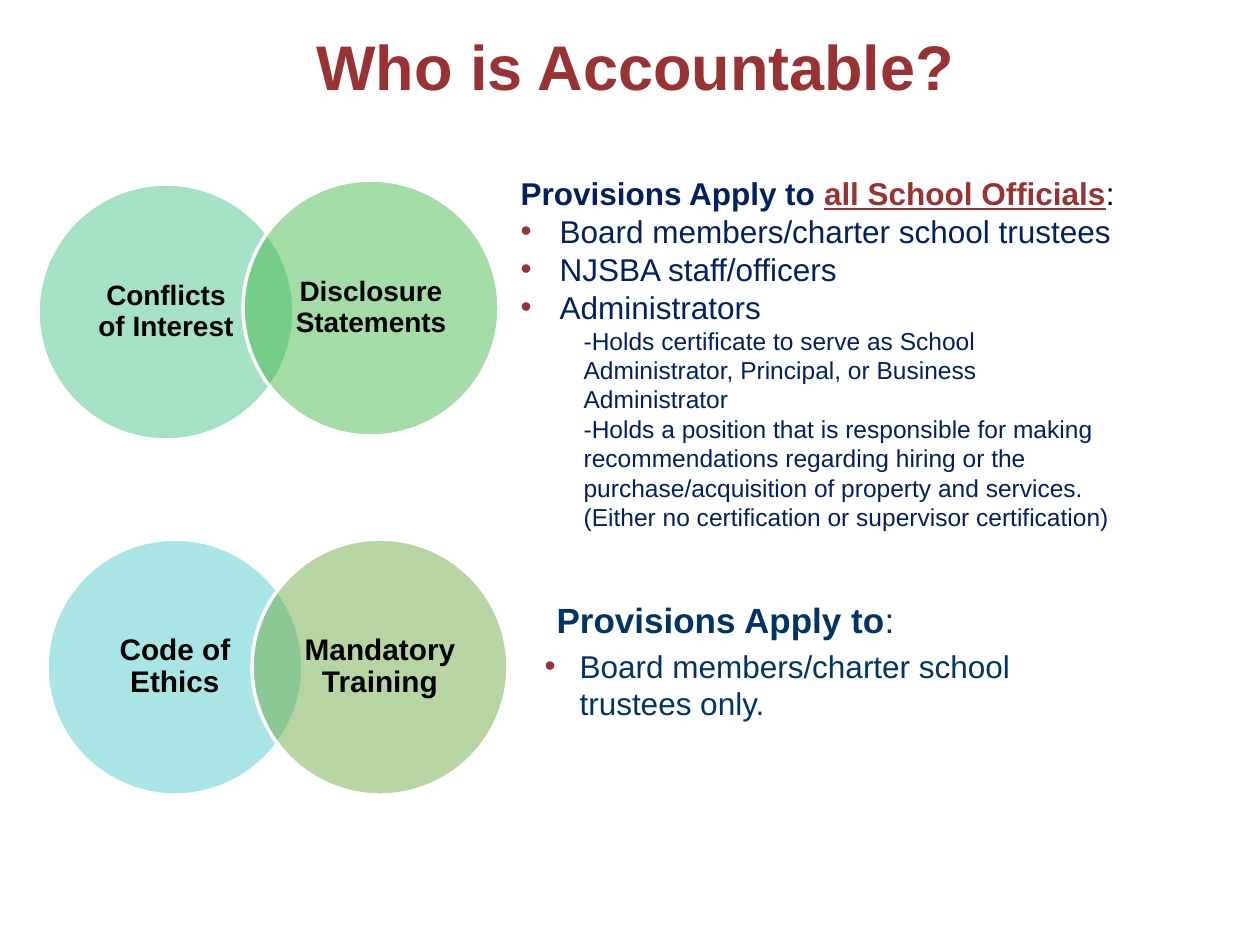
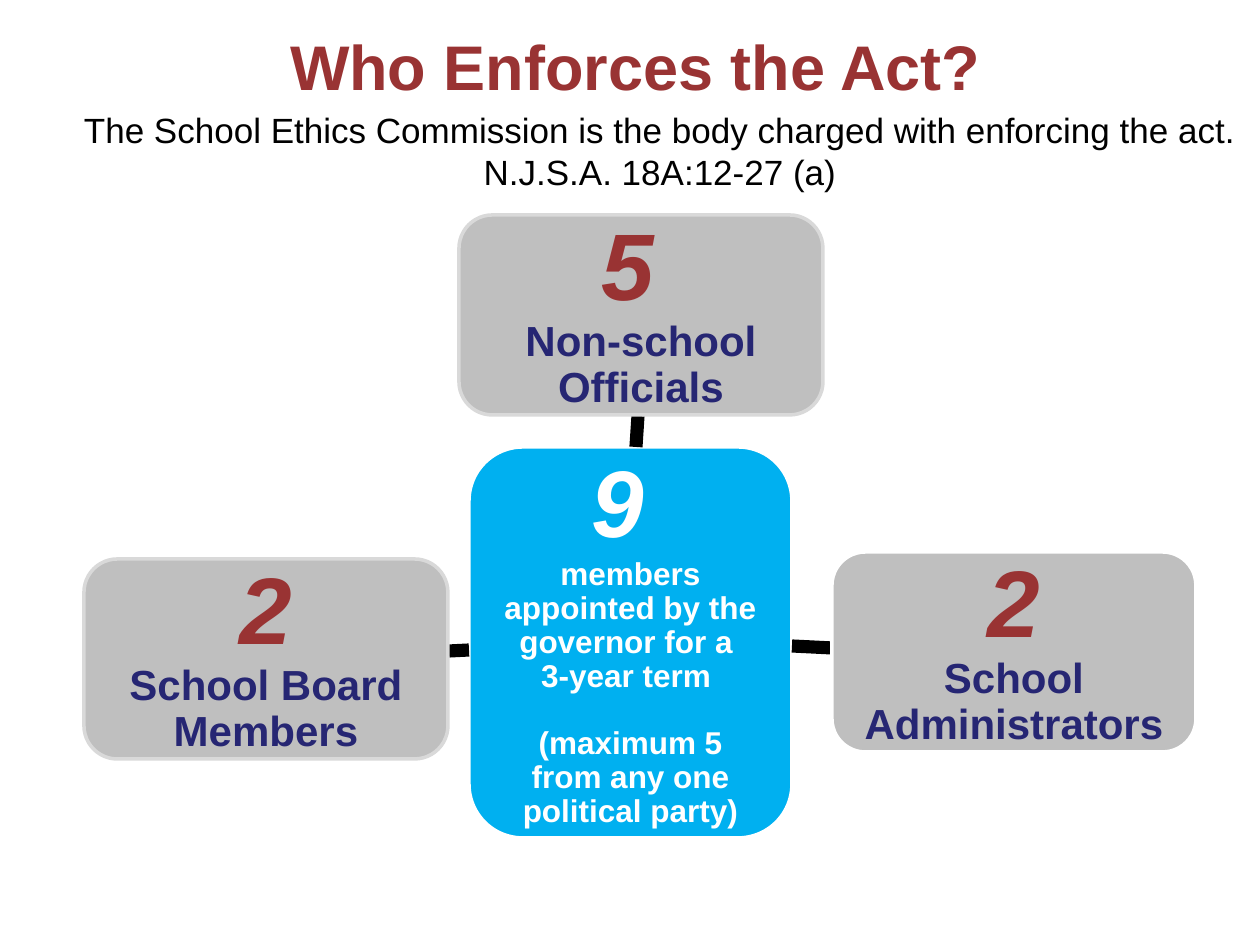
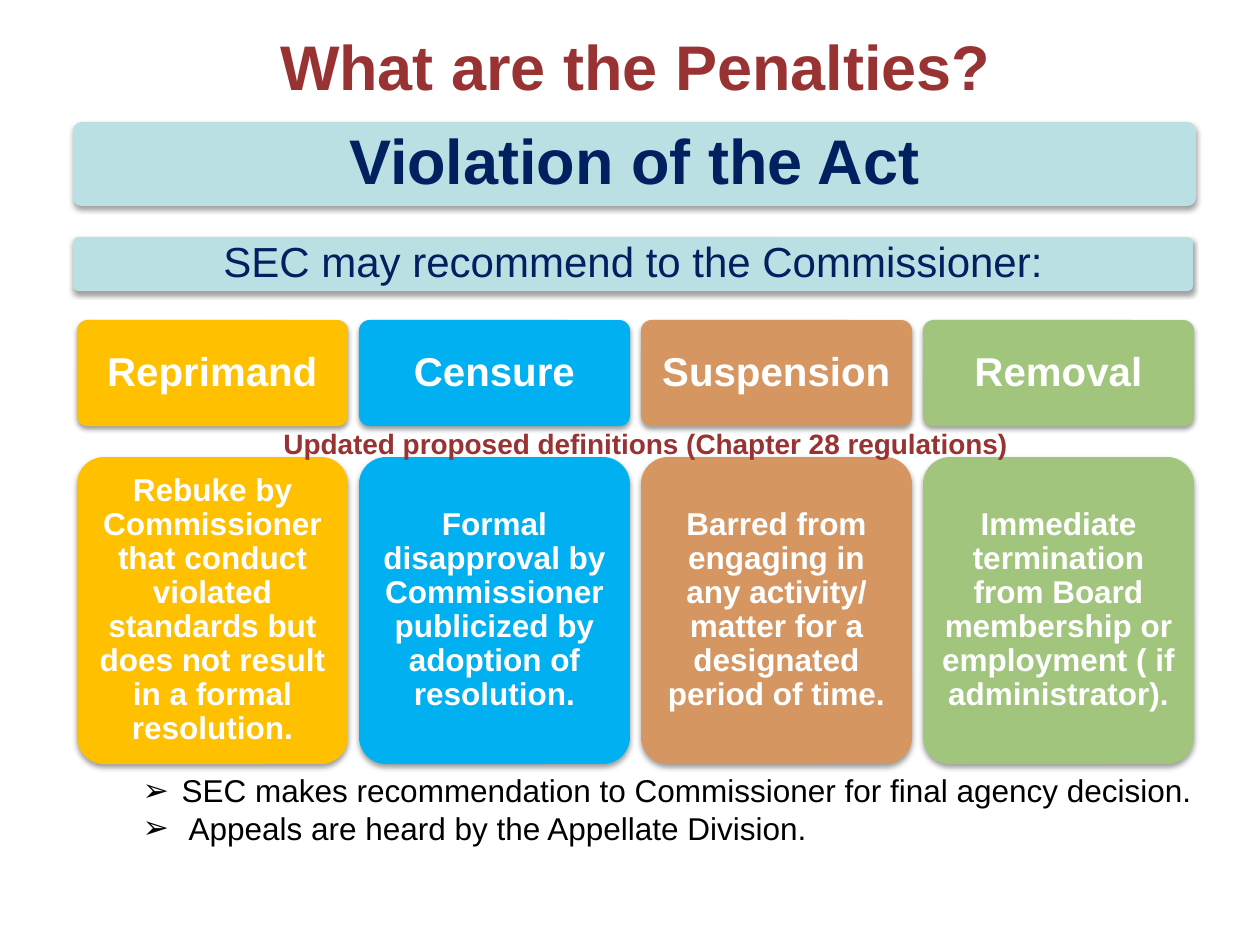
from lxml.etree import SubElement
from pptx import Presentation
from pptx.dml.color import RGBColor
from pptx.enum.shapes import MSO_CONNECTOR, MSO_SHAPE
from pptx.enum.text import MSO_ANCHOR, MSO_AUTO_SIZE, PP_ALIGN
from pptx.oxml.ns import qn
from pptx.util import Emu, Pt

SCALE = 914400 / 126
TITLE_ONLY, ONE_LIST, TWO_LISTS = 5, 1, 3

BLACK = RGBColor(0x00, 0x00, 0x00)
WHITE = RGBColor(0xFF, 0xFF, 0xFF)
MAROON = RGBColor(0x99, 0x33, 0x33)
NAVY = RGBColor(0x00, 0x20, 0x60)
OCEAN = RGBColor(0x00, 0x33, 0x66)
INDIGO = RGBColor(0x26, 0x26, 0x73)
SKY = RGBColor(0x00, 0xB0, 0xF0)
GRAY = RGBColor(0xBF, 0xBF, 0xBF)
LIGHT_GRAY = RGBColor(0xD9, 0xD9, 0xD9)
PALE_TEAL = RGBColor(0xBB, 0xE0, 0xE3)
GOLD = RGBColor(0xFF, 0xC0, 0x00)
COPPER = RGBColor(0xD6, 0x96, 0x62)
SAGE = RGBColor(0xA1, 0xC5, 0x7D)
MINT = RGBColor(0x4D, 0xC5, 0x8D)
GREEN = RGBColor(0x48, 0xBB, 0x4F)
TURQUOISE = RGBColor(0x54, 0xCC, 0xCD)
OLIVE = RGBColor(0x70, 0xAD, 0x47)


def px(length):
    return Emu(round(length * SCALE))


class Deck:
    font_name = "Arial"
    title_place = (105, 21, 1061, 89)

    def __init__(self):
        self.deck = Presentation()
        self.deck.slide_width = px(1260)
        self.deck.slide_height = px(945)
        self.page = None

    def add_page(self, title, layout):
        self.page = self.deck.slides.add_slide(self.deck.slide_layouts[layout])
        box = self.page.shapes.title
        self.place(box, self.title_place)
        frame = box.text_frame
        frame.text = title
        frame.auto_size = MSO_AUTO_SIZE.NONE
        frame.vertical_anchor = MSO_ANCHOR.MIDDLE
        self.format_text(frame, 36, MAROON, True, PP_ALIGN.CENTER)

    def place(self, box, place):
        box.left, box.top, box.width, box.height = map(px, place)

    def format_span(self, span, size, color, bold=False, italic=False, underline=False):
        font = span.font
        font.name = self.font_name
        font.size = Pt(size)
        font.color.rgb = color
        font.bold = bold
        font.italic = italic
        font.underline = underline

    def format_text(self, frame, size, color, bold, align, line_spacing=1.0):
        for para in frame.paragraphs:
            para.alignment = align
            para.line_spacing = line_spacing
            for span in para.runs:
                self.format_span(span, size, color, bold)

    def label(self, text, place, size, color, bold=False, align=PP_ALIGN.LEFT):
        box = self.page.shapes.add_textbox(*map(px, place))
        frame = box.text_frame
        frame.word_wrap = False
        frame.text = text
        self.format_text(frame, size, color, bold, align)

    def card(self, kind, place, fill, text, size, color, bold=True, insets=(19, 19), border=None):
        box = self.page.shapes.add_shape(kind, *map(px, place))
        box.shadow.inherit = False
        box.fill.solid()
        box.fill.fore_color.rgb = fill
        if border is None:
            box.line.fill.background()
        else:
            box.line.color.rgb = border
            box.line.width = Pt(2)
        frame = box.text_frame
        frame.word_wrap = True
        frame.vertical_anchor = MSO_ANCHOR.MIDDLE
        frame.margin_left = frame.margin_right = px(insets[0])
        frame.margin_top = frame.margin_bottom = px(insets[1])
        frame.text = text
        self.format_text(frame, size, color, bold, PP_ALIGN.CENTER, 0.9)
        return box

    def circle(self, left, top, fill, text, size):
        box = self.card(MSO_SHAPE.OVAL, (left, top, 256, 256), fill, text, size, BLACK,
                        insets=(14, 3), border=WHITE)
        color = box.fill._xPr.find(qn("a:solidFill"))[0]
        SubElement(color, qn("a:alpha"), val="50000")

    def number_card(self, place, fill, border, text, size, color, number_color):
        box = self.card(MSO_SHAPE.ROUNDED_RECTANGLE, place, fill, text, size, color, border=border)
        paras = box.text_frame.paragraphs
        self.format_span(paras[0].runs[0], 54, number_color, True, True)
        for para in paras[:-1]:
            para.space_after = Pt(18.9)

    def shadow_card(self, place, fill, text, size, color, inset, bold=True):
        box = self.card(MSO_SHAPE.ROUNDED_RECTANGLE, place, fill, text, size, color, bold,
                        (inset, inset))
        box.adjustments[0] = 0.1
        effects = box._element.spPr.find(qn("a:effectLst"))
        shadow = SubElement(effects, qn("a:outerShdw"), blurRad=str(Pt(3.1)), dist=str(Pt(1.6)),
                            dir="5400000", algn="ctr", rotWithShape="0")
        color = SubElement(shadow, qn("a:srgbClr"), val="000000")
        SubElement(color, qn("a:alpha"), val="38000")

    def line(self, *ends):
        connector = self.page.shapes.add_connector(MSO_CONNECTOR.STRAIGHT, *map(px, ends))
        connector.line.color.rgb = BLACK
        connector.line.width = Pt(7.5)
        SubElement(connector._element.spPr, qn("a:effectLst"))

    def list_box(self, index, place):
        box = self.page.placeholders[index]
        self.place(box, place)
        frame = box.text_frame
        frame.word_wrap = True
        frame.auto_size = MSO_AUTO_SIZE.NONE
        frame.vertical_anchor = MSO_ANCHOR.TOP
        return frame

    def list_item(self, frame, spans, indent=0, bullet=None, bullet_color=MAROON, before=0, level=0):
        para = frame.paragraphs[0]
        if para.runs:
            para = frame.add_paragraph()
        para.level = level
        properties = para._p.get_or_add_pPr()
        properties.set("marL", str(px(indent)))
        properties.set("indent", str(px(-indent if bullet else 0)))
        if bullet:
            color = SubElement(properties, qn("a:buClr"))
            SubElement(color, qn("a:srgbClr"), val=str(bullet_color))
            SubElement(properties, qn("a:buFont"), typeface=self.font_name)
            SubElement(properties, qn("a:buChar"), char=bullet)
        else:
            SubElement(properties, qn("a:buNone"))
        para.alignment = PP_ALIGN.LEFT
        para.space_before = Pt(before)
        for text, *style in spans:
            span = para.add_run()
            span.text = text
            self.format_span(span, *style)


def build_accountable(deck):
    deck.add_page("Who is Accountable?", TWO_LISTS)
    deck.circle(38, 184, MINT, "Conflicts of Interest", 16)
    deck.circle(243, 180, GREEN, "Disclosure Statements", 16)
    deck.circle(47, 539, TURQUOISE, "Code of Ethics", 17)
    deck.circle(252, 539, OLIVE, "Mandatory Training", 17)

    officials = deck.list_box(1, (508, 168, 627, 373))
    deck.list_item(officials, [
        ("Provisions Apply to ", 18, NAVY, True),
        ("all School Officials", 18, MAROON, True, False, True),
        (":", 18, BLACK),
    ])
    for text in ("Board members/charter school trustees", "NJSBA staff/officers", "Administrators"):
        deck.list_item(officials, [(text, 18, NAVY)], 39, "•")
    for text in (
        "-Holds certificate to serve as School Administrator, Principal, or Business Administrator",
        "-Holds a position that is responsible for making recommendations regarding hiring or the "
        "purchase/acquisition of property and services. "
        "(Either no certification or supervisor certification)",
    ):
        deck.list_item(officials, [(text, 14, NAVY)], 63, level=1)

    members = deck.list_box(2, (532, 592, 514, 187))
    deck.list_item(members, [("Provisions Apply to", 20, OCEAN, True), (":", 20, OCEAN)], 12)
    deck.list_item(members, [("Board members/charter school trustees only.", 18, OCEAN)],
                   35, "•", before=3.6)


def build_enforcement(deck):
    deck.add_page("Who Enforces the Act?", TITLE_ONLY)
    deck.label("The School Ethics Commission is the body charged with enforcing the act.\n"
               "N.J.S.A. 18A:12-27 (a)", (67, 102, 1186, 97), 20, BLACK, align=PP_ALIGN.CENTER)
    deck.number_card((469, 447, 323, 391), SKY, WHITE,
                     "9 \vmembers appointed by the governor for a \v3-year term \n"
                     "(maximum 5 from any one political party)", 18, WHITE, WHITE)
    for ends, left, top, border, text in (
        ((792, 646, 832, 648), 832, 552, WHITE, "2\vSchool Administrators"),
        ((636, 447, 638, 416), 459, 215, LIGHT_GRAY, "5 \vNon-school Officials"),
        ((469, 650, 449, 651), 84, 559, LIGHT_GRAY, "2\vSchool Board Members"),
    ):
        deck.line(*ends)
        deck.number_card((left, top, 364, 200), GRAY, border, text, 24, INDIGO, MAROON)


def build_penalties(deck):
    deck.add_page("What are the Penalties?", ONE_LIST)
    deck.shadow_card((73, 122, 1123, 84), PALE_TEAL, "Violation of the Act", 36, NAVY, 19)
    deck.shadow_card((73, 237, 1120, 54), PALE_TEAL, "SEC may recommend to the Commissioner:",
                     24, NAVY, 13, False)
    penalties = (
        ("Reprimand", GOLD, "Rebuke by Commissioner that conduct violated standards "
                            "but does not result in a formal resolution."),
        ("Censure", SKY, "Formal disapproval by Commissioner publicized by adoption of resolution."),
        ("Suspension", COPPER, "Barred from engaging in any activity/ matter for a designated "
                               "period of time."),
        ("Removal", SAGE, "Immediate termination from Board membership or employment "
                          "( if administrator)."),
    )
    for column, (name, fill, meaning) in enumerate(penalties):
        left = 77 + 282 * column
        deck.shadow_card((left, 320, 271, 106), fill, name, 23, WHITE, 13)
        deck.shadow_card((left, 457, 271, 307), fill, meaning, 18, WHITE, 9)
    deck.label("Updated proposed definitions (Chapter 28 regulations)", (271, 420, 760, 47),
               16, MAROON, True)
    notes = deck.list_box(1, (130, 765, 1102, 89))
    for text in ("SEC makes recommendation to Commissioner for final agency decision.",
                 " Appeals are heard by the Appellate Division."):
        deck.list_item(notes, [(text, 18, BLACK)], 39, "➢", BLACK)


def main():
    deck = Deck()
    build_accountable(deck)
    build_enforcement(deck)
    build_penalties(deck)
    deck.deck.save("out.pptx")


if __name__ == "__main__":
    main()
